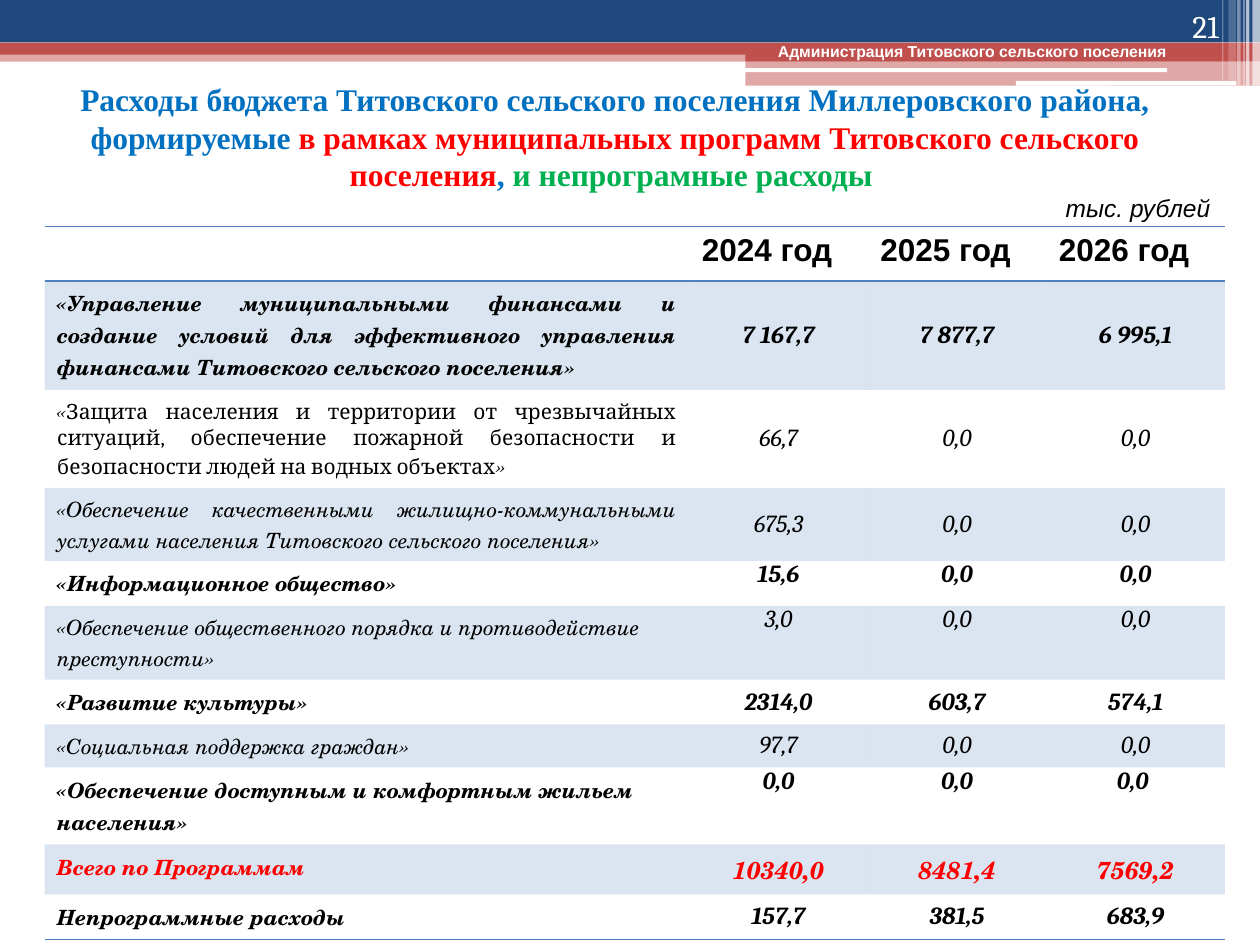
from lxml.etree import SubElement as Sub
from pptx import Presentation
from pptx.dml.color import RGBColor
from pptx.enum.shapes import MSO_SHAPE as Geo
from pptx.enum.text import MSO_ANCHOR as Anchor, PP_ALIGN as Align
from pptx.oxml import parse_xml
from pptx.oxml.ns import nsdecls, qn
from pptx.util import Pt

NAVY, RED, WHITE, BLACK, BLUE = "1F497D", "C0504D", "FFFFFF", "000000", "4F81BD"
HOT = "FF0000"
SCHOLA, SERIF = "TeX Gyre Schola", "Cambria"


def paint(fill, tone, alpha=100):
    """Solid fill; alpha is opacity in percent."""
    fill.solid()
    fill.fore_color.rgb = RGBColor.from_string(tone)
    if alpha < 100:
        clr = next(fill._xPr.iter(qn("a:srgbClr")))
        Sub(clr, qn("a:alpha"), val=str(alpha * 1000))


def write(frame, runs, align=Align.LEFT, **base):
    """Fill one paragraph with (text, changes) runs over a base format."""
    para = frame.paragraphs[0]
    para.alignment = align
    for text, diff in runs:
        run = para.add_run()
        run.text = text
        look = {"color": BLACK, **base, **diff}
        paint(run.font.fill, look.pop("color"))
        for key, val in look.items():
            setattr(run.font, key, val)


deck = Presentation()
deck.slide_width, deck.slide_height = Pt(720), Pt(540)
slide = deck.slides.add_slide(deck.slide_layouts[6])
shapes = slide.shapes

# Header bands, white rules and the stripes at the right edge
BOX, PILL = Geo.RECTANGLE, Geo.ROUNDED_RECTANGLE
bands = [
    (BOX, 0, 28.8, 720, 6.5, RED, 50),
    (BOX, 0, 0, 720, 24.3, NAVY, 100),
    (BOX, 0, 24.3, 720, 7, RED, 100),
    (BOX, 426, 28, 294, 7, RED, 100),
    (BOX, 426, 35, 294, 14, RED, 50),
    (PILL, 425.5, 39, 241.5, 2.2, WHITE, 100),
    (PILL, 580.5, 46.3, 126, 2.6, WHITE, 100),
]
stripes = [(715.7, 4.3, 49, 65), (712, 2, 49, 65), (710.5, 0.7, 49, 60),
           (707, 2, 49, 40), (702, 4.3, 46, 20), (698.4, 0.7, 46, 30)]
bands += [(BOX, x, 0, w, h, WHITE, a) for x, w, h, a in stripes]
for geo, x, y, w, h, tone, alpha in bands:
    band = shapes.add_shape(geo, Pt(x), Pt(y), Pt(w), Pt(h))
    band.shadow.inherit = False
    band.line.fill.background()
    paint(band.fill, tone, alpha)

# Text boxes
TOP, MID, LOW = Anchor.TOP, Anchor.MIDDLE, Anchor.BOTTOM
title = [
    ("Расходы бюджета Титовского сельского поселения Миллеровского района, "
     "формируемые ", {}),
    ("в рамках муниципальных программ Титовского сельского поселения", {"color": HOT}),
    (", ", {}),
    ("и непрограмные расходы ", {"color": "00B050"}),
]
notes = [
    (0, 43.5, 703, 69, MID, Align.CENTER, title,
     {"size": Pt(18), "name": "Times New Roman", "bold": True, "color": "0070C0"}),
    (643.7, 0, 59.8, 29, LOW, Align.RIGHT, [("21", {})],
     {"size": Pt(18), "name": SERIF, "color": WHITE}),
    (601.9, 106.6, 102.2, 24.2, TOP, Align.LEFT, [("тыс. рублей", {})],
     {"size": Pt(14), "name": "Arial", "italic": True}),
    (410.7, 20.5, 289.4, 18.2, TOP, Align.CENTER,
     [("Администрация Титовского сельского поселения", {})],
     {"size": Pt(9), "name": "Arial", "bold": True, "color": WHITE}),
]
for x, y, w, h, anchor, align, runs, look in notes:
    frame = shapes.add_textbox(Pt(x), Pt(y), Pt(w), Pt(h)).text_frame
    frame.word_wrap = True
    frame.vertical_anchor = anchor
    write(frame, runs, align, **look)

# Budget table: height, name, values, bold, justified, value anchor
years = ["2024 год", "2025 год", "2026 год"]
zero = "0,0"
rows = [
    (62.3, "«Управление муниципальными финансами и создание условий для эффективного "
     "управления финансами Титовского сельского поселения»",
     ["7 167,7", "7 877,7", "6 995,1"], True, True, MID),
    (56, "«Защита населения и территории от чрезвычайных ситуаций, обеспечение "
     "пожарной безопасности и безопасности людей на водных объектах»",
     ["66,7", zero, zero], False, True, MID),
    (41.8, "«Обеспечение качественными жилищно-коммунальными услугами населения "
     "Титовского сельского поселения»", ["675,3", zero, zero], False, True, MID),
    (25.7, "«Информационное общество»", ["15,6", zero, zero], True, False, TOP),
    (42.2, "«Обеспечение общественного порядка и противодействие преступности»",
     ["3,0", zero, zero], False, False, TOP),
    (25.6, "«Развитие культуры»", ["2314,0", "603,7", "574,1"], True, False, MID),
    (24.6, "«Социальная поддержка граждан»", ["97,7", zero, zero], False, False, MID),
    (44, "«Обеспечение доступным и комфортным жильем населения»",
     [zero, zero, "0,0 "], True, False, TOP),
    (28.6, "Всего по Программам", ["10340,0", "8481,4", "7569,2"], True, False, TOP),
    (25.6, "Непрограммные расходы", ["157,7", "381,5", "683,9"], True, False, MID),
]
SAFETY, TOTAL, LAST = 2, 9, len(rows)
table = shapes.add_table(LAST + 1, 4, Pt(25.5), Pt(129.5), Pt(674.4), Pt(407.4)).table
table.first_row = table.horz_banding = False
for col, wide in zip(table.columns, [368.4, 102, 102, 102]):
    col.width = Pt(wide)

table.rows[0].height = Pt(31)
for c, year in enumerate(years, 1):
    write(table.cell(0, c).text_frame, [(year, {})],
          size=Pt(18), name="Arial", bold=True)

for r, (high, name, vals, bold, full, anchor) in enumerate(rows, 1):
    table.rows[r].height = Pt(high)
    look = {"bold": bold, "italic": True, "color": HOT if r == TOTAL else BLACK}
    runs = [(name, {})]
    if r == SAFETY:
        plain = {"name": SERIF, "italic": False}
        runs = [(name[0], {}), (name[1:-1], plain), (name[-1], {})]
    write(table.cell(r, 0).text_frame, runs, Align.JUSTIFY if full else Align.LEFT,
          size=Pt(12), name=SCHOLA, **look)
    for c, val in enumerate(vals, 1):
        cell = table.cell(r, c)
        cell.vertical_anchor = anchor
        if r != TOTAL:
            cell.margin_left = cell.margin_right = Pt(5)
            cell.margin_top = cell.margin_bottom = 0
        write(cell.text_frame, [(val, {})], Align.CENTER, size=Pt(14),
              name=SCHOLA if r == TOTAL else SERIF, **look)

# Cell fills and rules
sides = {0: ["lnB", "lnT"], 1: ["lnT"], LAST: ["lnB"]}
for r, row in enumerate(table.rows):
    for cell in row.cells:
        if r % 2:
            paint(cell.fill, BLUE, 20)
        else:
            cell.fill.background()
        props = cell._tc.get_or_add_tcPr()
        for side in ["lnB", "lnT", "lnR", "lnL"]:
            ink = "<a:noFill/>"
            if side in sides.get(r, []):
                ink = f'<a:solidFill><a:srgbClr val="{BLUE}"/></a:solidFill>'
            props.insert(0, parse_xml(
                f'<a:{side} {nsdecls("a")} w="12700">{ink}</a:{side}>'))

deck.save("out.pptx")
